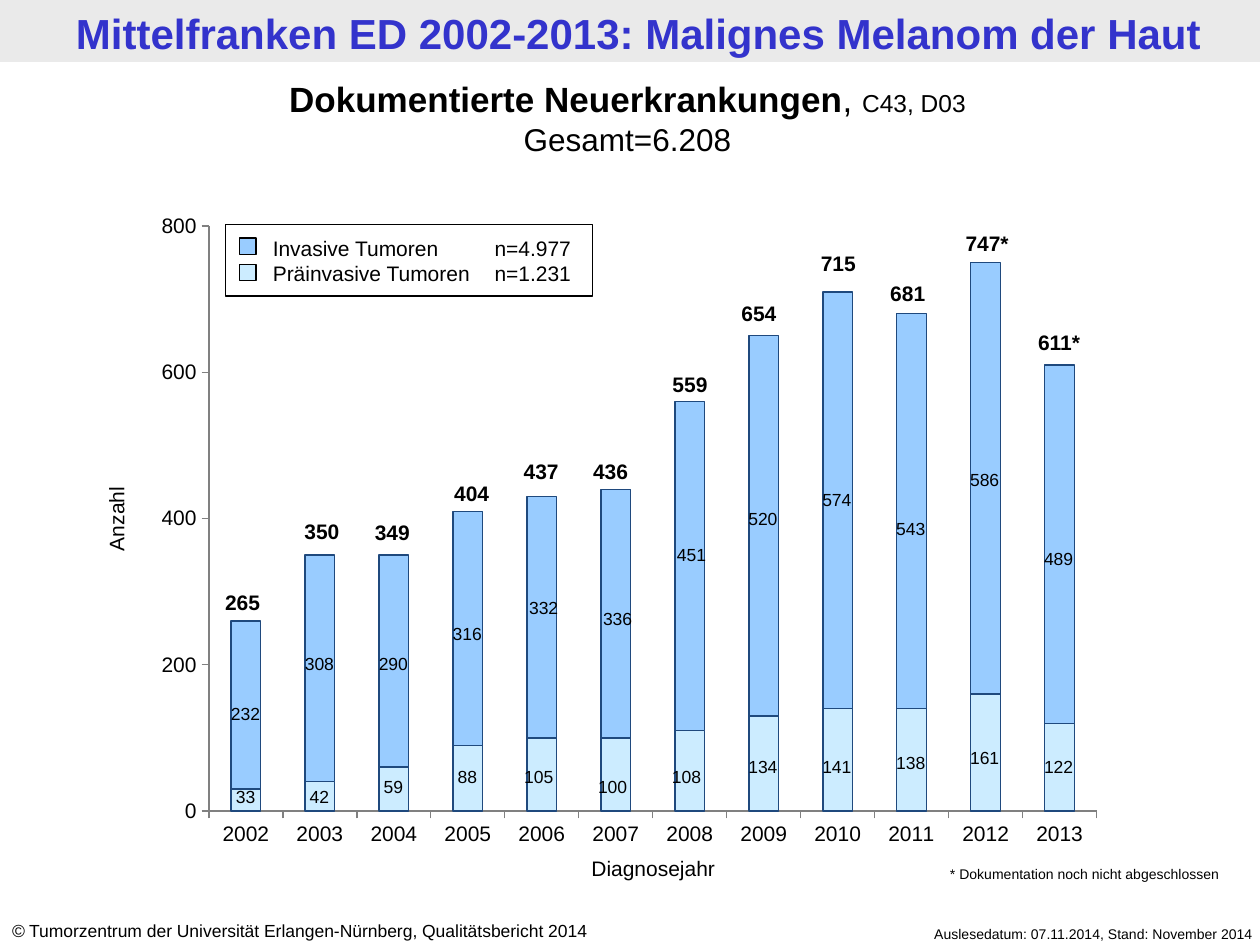
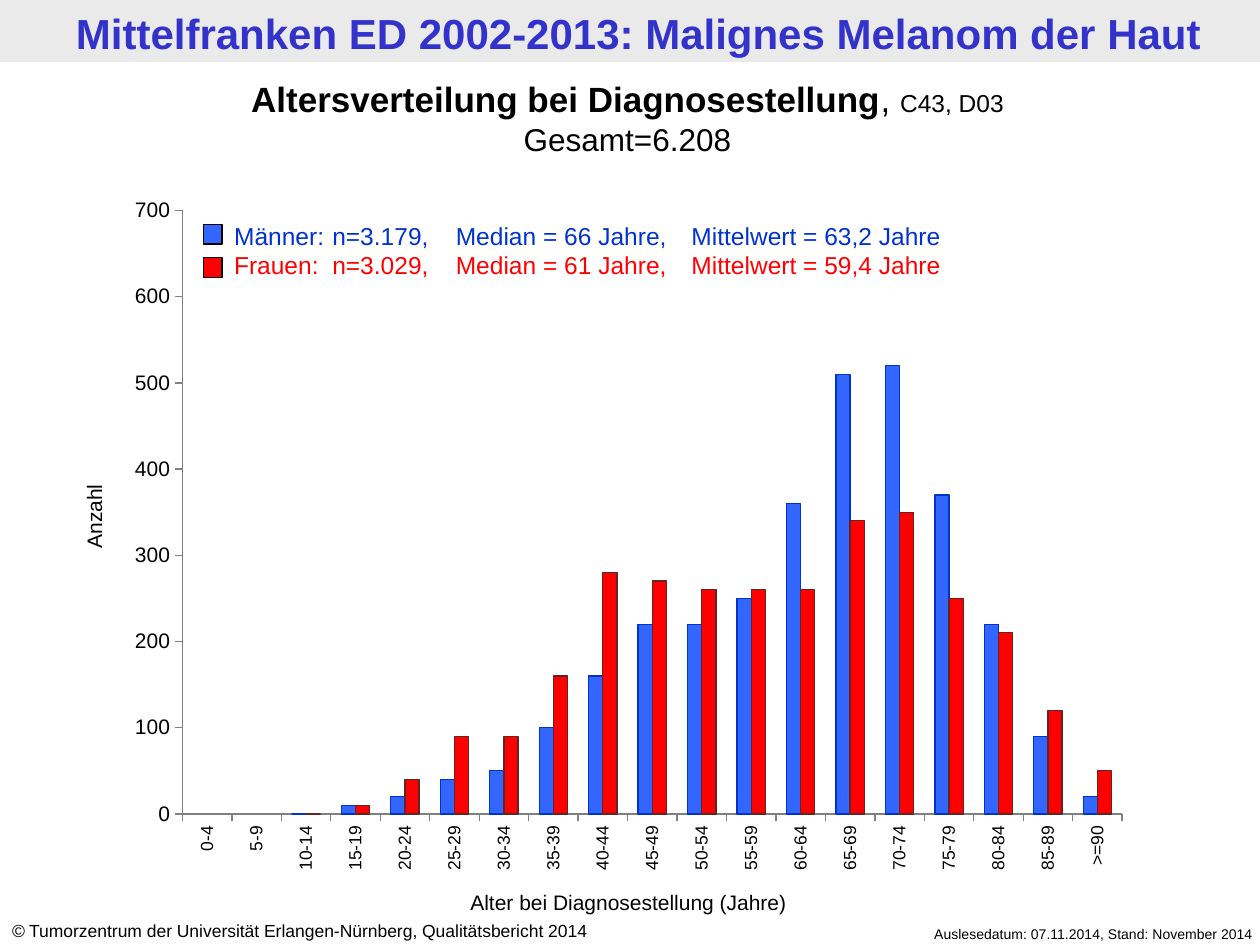
"""Build two chart slides on malignant melanoma diagnoses in Mittelfranken."""
from pptx import Presentation
from pptx.chart.data import CategoryChartData
from pptx.dml.color import RGBColor
from pptx.enum.chart import XL_CHART_TYPE, XL_TICK_MARK
from pptx.enum.shapes import MSO_SHAPE
from pptx.enum.text import MSO_ANCHOR, MSO_AUTO_SIZE, PP_ALIGN
from pptx.oxml import parse_xml
from pptx.oxml.ns import nsdecls
from pptx.util import Cm, Pt

FONT = "Arial"
COLORS = {
    "black": "000000", "band": "EAEAEA", "header": "3333CC", "axis": "808080",
    "invasive": "99CCFF", "preinvasive": "CCECFF", "stack_line": "1F497D",
    "men": "3366FF", "men_dark": "0033CC", "women": "FF0000", "women_line": "632523",
}
TITLE_ONLY = 5
FIRST_COLUMN_CENTER, COLUMN_PITCH = 4.95, 1.49

# year, preinvasive, label top, invasive, label top, total label center, top
NEW_CASES = [
    ("2002", 33, 15.72, 232, 14.05, 4.89, 11.76),
    ("2003", 42, 15.72, 308, 13.03, 6.49, 10.33),
    ("2004", 59, 15.52, 290, 13.03, 7.91, 10.35),
    ("2005", 88, 15.32, 316, 12.44, 9.51, 9.56),
    ("2006", 105, 15.32, 332, 11.92, 10.91, 9.12),
    ("2007", 100, 15.52, 336, 12.13, 12.31, 9.12),
    ("2008", 108, 15.32, 451, 10.85, 13.91, 7.37),
    ("2009", 134, 15.11, 520, 10.12, 15.3, 5.93),
    ("2010", 141, 15.11, 574, 9.73, 16.9, 4.93),
    ("2011", 138, 15.04, 543, 10.31, 18.3, 5.54),
    ("2012", 161, 14.94, 586, 9.33, 19.9, 4.52),
    ("2013", 122, 15.11, 489, 10.92, 21.35, 6.52),
]
INCOMPLETE_YEARS = {"2012", "2013"}
STAGGERED_YEARS = {"2006", "2007", "2008"}
AGE_GROUPS = [f"{age}-{age + 4}" for age in range(0, 90, 5)] + [">=90"]
MEN = [None, None, 0, 10, 20, 40, 50, 100, 160, 220, 220, 250, 360, 510, 520, 370,
       220, 90, 20]
WOMEN = [None, None, 0, 10, 40, 90, 90, 160, 280, 270, 260, 260, 260, 340, 350, 250,
         210, 120, 50]


def rgb(name):
    """Return the named colour."""
    return RGBColor.from_string(COLORS[name])


def add_run(paragraph, text, size, color="black", bold=False, italic=False):
    """Append one formatted run."""
    run = paragraph.add_run()
    run.text = text
    font = run.font
    font.name, font.size, font.bold, font.italic = FONT, Pt(size), bold, italic
    font.color.rgb = rgb(color)


def add_text(slide, box, text="", size=12, align=PP_ALIGN.LEFT, color="black",
             bold=False, margin=0.25):
    """Add a wrapping text box and return it."""
    shape = slide.shapes.add_textbox(*map(Cm, box))
    frame = shape.text_frame
    frame.word_wrap = True
    frame.margin_left = frame.margin_right = Cm(margin)
    paragraph = frame.paragraphs[0]
    paragraph.alignment = align
    if text:
        add_run(paragraph, text, size, color, bold)
    return shape


def add_rectangle(slide, box, fill=None, line=None):
    """Add a plain rectangle and return it."""
    shape = slide.shapes.add_shape(MSO_SHAPE.RECTANGLE, *map(Cm, box))
    shape.shadow.inherit = False
    if fill:
        shape.fill.solid()
        shape.fill.fore_color.rgb = rgb(fill)
    else:
        shape.fill.background()
    if line:
        shape.line.color.rgb = rgb(line)
        shape.line.width = Pt(0.75)
    else:
        shape.line.fill.background()
    return shape


def add_legend(slide, box, lines, size, tab_stops):
    """Add legend lines of tab-separated (text, colour) pairs."""
    frame = add_text(slide, box).text_frame
    for index, (text, color) in enumerate(lines):
        paragraph = frame.add_paragraph() if index else frame.paragraphs[0]
        stops = "".join(f'<a:tab pos="{Cm(stop)}" algn="l"/>' for stop in tab_stops)
        tab_list = parse_xml(f'<a:tabLst {nsdecls("a")}>{stops}</a:tabLst>')
        paragraph._p.get_or_add_pPr().append(tab_list)
        add_run(paragraph, text, size, color)


def add_axis_title(slide, box, text, rotation=0):
    """Add a centred axis title."""
    add_text(slide, box, text, align=PP_ALIGN.CENTER).rotation = rotation


def format_axis(axis, size):
    """Give an axis its line, outside ticks and label font."""
    axis.has_major_gridlines = False
    axis.major_tick_mark = XL_TICK_MARK.OUTSIDE
    axis.minor_tick_mark = XL_TICK_MARK.NONE
    axis.format.line.color.rgb = rgb("axis")
    axis.format.line.width = Pt(0.75)
    font = axis.tick_labels.font
    font.name, font.size = FONT, Pt(size)
    font.color.rgb = rgb("black")


def set_plot_area(chart, area):
    """Fix the inner plot area as fractions of the chart."""
    plot_area = chart.element.xpath("c:chart/c:plotArea")[0]
    for layout in plot_area.xpath("c:layout"):
        plot_area.remove(layout)
    modes = "".join(f'<c:{side}Mode val="edge"/>' for side in "xy")
    sizes = "".join(f'<c:{key} val="{value}"/>' for key, value in zip("xywh", area))
    plot_area.insert(0, parse_xml(
        f'<c:layout {nsdecls("c")}><c:manualLayout><c:layoutTarget val="inner"/>'
        f"{modes}{sizes}</c:manualLayout></c:layout>"))


def add_column_chart(slide, box, kind, categories, series_list, maximum, step, area,
                     category_size=12):
    """Add a column chart from (name, values, fill, line) series."""
    data = CategoryChartData()
    data.categories = categories
    for name, values, _, _ in series_list:
        data.add_series(name, values)
    chart = slide.shapes.add_chart(kind, *map(Cm, box), data).chart
    chart.has_legend = chart.has_title = False
    chart.font.name, chart.font.size = FONT, Pt(12)
    chart.font.color.rgb = rgb("black")
    plot = chart.plots[0]
    plot.gap_width = 150
    plot.overlap = 100 if kind == XL_CHART_TYPE.COLUMN_STACKED else 0
    plot.vary_by_categories = False
    for series, (_, _, fill, line) in zip(plot.series, series_list):
        series.format.fill.solid()
        series.format.fill.fore_color.rgb = rgb(fill)
        series.format.line.color.rgb = rgb(line)
        series.format.line.width = Pt(0.75)
    format_axis(chart.category_axis, category_size)
    format_axis(chart.value_axis, 12)
    chart.value_axis.minimum_scale = 0
    chart.value_axis.maximum_scale = maximum
    chart.value_axis.major_unit = step
    set_plot_area(chart, area)
    return chart


def add_titled_slide(presentation, title):
    """Add a title-only slide with the two-line heading."""
    slide = presentation.slides.add_slide(presentation.slide_layouts[TITLE_ONLY])
    shape = slide.shapes.title
    shape.left, shape.top, shape.width, shape.height = map(Cm, (-0.1, 1.44, 25.5, 1.88))
    frame = shape.text_frame
    frame.auto_size = MSO_AUTO_SIZE.NONE
    frame.vertical_anchor = MSO_ANCHOR.TOP
    heading, total = frame.paragraphs[0], frame.add_paragraph()
    heading.alignment = total.alignment = PP_ALIGN.CENTER
    add_run(heading, title, 20, bold=True)
    add_run(heading, ", ", 20)
    add_run(heading, "C43, D03", 14)
    add_run(total, "Gesamt=6.208", 18)
    return slide


def move_frame_to_layout(slide):
    """Draw the header band and footers and hand them to the slide's layout."""
    layout = slide.slide_layout
    for placeholder in list(layout.placeholders):
        if placeholder.placeholder_format.idx:
            layout.shapes.element.remove(placeholder.element)
    band = add_rectangle(slide, (0, 0, 25.4, 1.25), "band")
    header = add_text(slide, (0.17, 0.03, 25.4, 1.24),
                      "Mittelfranken ED 2002-2013: Malignes Melanom der Haut", 24,
                      PP_ALIGN.CENTER, "header", True)
    date = add_text(slide, (16.91, 18.53, 8.6, 0.6),
                    "Auslesedatum: 07.11.2014, Stand: November 2014", 8, PP_ALIGN.RIGHT)
    source = add_text(slide, (-0.01, 18.43, 13.3, 0.69))
    paragraph = source.text_frame.paragraphs[0]
    add_run(paragraph, "©", 10, italic=True)
    add_run(paragraph,
            " Tumorzentrum der Universität Erlangen-Nürnberg, Qualitätsbericht 2014", 10)
    for shape in (band, header, date, source):
        layout.shapes.element.append(shape.element)


def add_number(slide, center, top, text, size=10, bold=False):
    """Add a number centred on a horizontal position."""
    width = 1.6
    add_text(slide, (center - width / 2, top, width, 0.7), text, size,
             PP_ALIGN.CENTER, bold=bold, margin=0)


def add_column_numbers(slide):
    """Label each stacked column with its parts and its total."""
    for column, (year, low, low_top, high, high_top, total_center,
                 total_top) in enumerate(NEW_CASES):
        center = FIRST_COLUMN_CENTER + COLUMN_PITCH * column
        shift = 0.05 if year in STAGGERED_YEARS else 0
        mark = "*" if year in INCOMPLETE_YEARS else ""
        add_number(slide, total_center, total_top, f"{low + high}{mark}", 12, True)
        add_number(slide, center + shift, high_top, str(high))
        add_number(slide, center - shift, low_top, str(low))


def fill_new_cases(slide):
    """Fill the slide on documented new cases."""
    years = [row[0] for row in NEW_CASES]
    preinvasive = [round(row[1], -1) for row in NEW_CASES]
    invasive = [round(row[3], -1) for row in NEW_CASES]
    add_column_chart(
        slide, (2.92, 4.18, 19.58, 13.06), XL_CHART_TYPE.COLUMN_STACKED, years,
        [("Präinvasive Tumoren", preinvasive, "preinvasive", "stack_line"),
         ("Invasive Tumoren", invasive, "invasive", "stack_line")],
        800, 200, (0.066, 0.029, 0.914, 0.903))
    add_axis_title(slide, (10.31, 17.12, 5.72, 0.76), "Diagnosejahr")
    add_axis_title(slide, (0.79, 10.08, 3.1, 0.76), "Anzahl", 270)
    add_rectangle(slide, (4.55, 4.52, 7.39, 1.45), line="black")
    add_legend(slide, (5.25, 4.62, 6.7, 1.27),
               [("Invasive Tumoren\tn=4.977", "black"),
                ("Präinvasive Tumoren\tn=1.231", "black")], 12, [4.47])
    for top, fill in ((4.8, "invasive"), (5.33, "preinvasive")):
        add_rectangle(slide, (4.83, top, 0.33, 0.33), fill, "black")
    add_column_numbers(slide)
    add_text(slide, (18.9, 17.32, 6.3, 0.6), "* Dokumentation noch nicht abgeschlossen", 8)


def fill_age_distribution(slide):
    """Fill the slide on age at diagnosis."""
    chart = add_column_chart(
        slide, (2.33, 3.75, 20.73, 14.1), XL_CHART_TYPE.COLUMN_CLUSTERED, AGE_GROUPS,
        [("Männer", MEN, "men", "men_dark"), ("Frauen", WOMEN, "women", "women_line")],
        700, 100, (0.065, 0.035, 0.914, 0.863), 10)
    label_body = chart.element.xpath(".//c:catAx/c:txPr/a:bodyPr")[0]
    label_body.set("rot", "-5400000")
    label_body.set("vert", "horz")
    add_legend(slide, (4.47, 4.33, 17.4, 1.45),
               [("Männer:\tn=3.179,\tMedian = 66 Jahre,\tMittelwert = 63,2 Jahre",
                 "men_dark"),
                ("Frauen:\tn=3.029,\tMedian = 61 Jahre,\tMittelwert = 59,4 Jahre",
                 "women")], 14, [1.98, 4.47, 9.22])
    for top, fill in ((4.52, "men"), (5.19, "women")):
        add_rectangle(slide, (4.1, top, 0.38, 0.4), fill, "black")
    add_axis_title(slide, (8.77, 17.81, 7.8, 0.76), "Alter bei Diagnosestellung (Jahre)")
    add_axis_title(slide, (0.34, 10.03, 3.1, 0.76), "Anzahl", 270)


def main():
    """Build and save the presentation."""
    presentation = Presentation()
    presentation.slide_width, presentation.slide_height = Cm(25.4), Cm(19.05)
    new_cases = add_titled_slide(presentation, "Dokumentierte Neuerkrankungen")
    move_frame_to_layout(new_cases)
    fill_new_cases(new_cases)
    fill_age_distribution(
        add_titled_slide(presentation, "Altersverteilung bei Diagnosestellung"))
    presentation.save("out.pptx")


if __name__ == "__main__":
    main()
